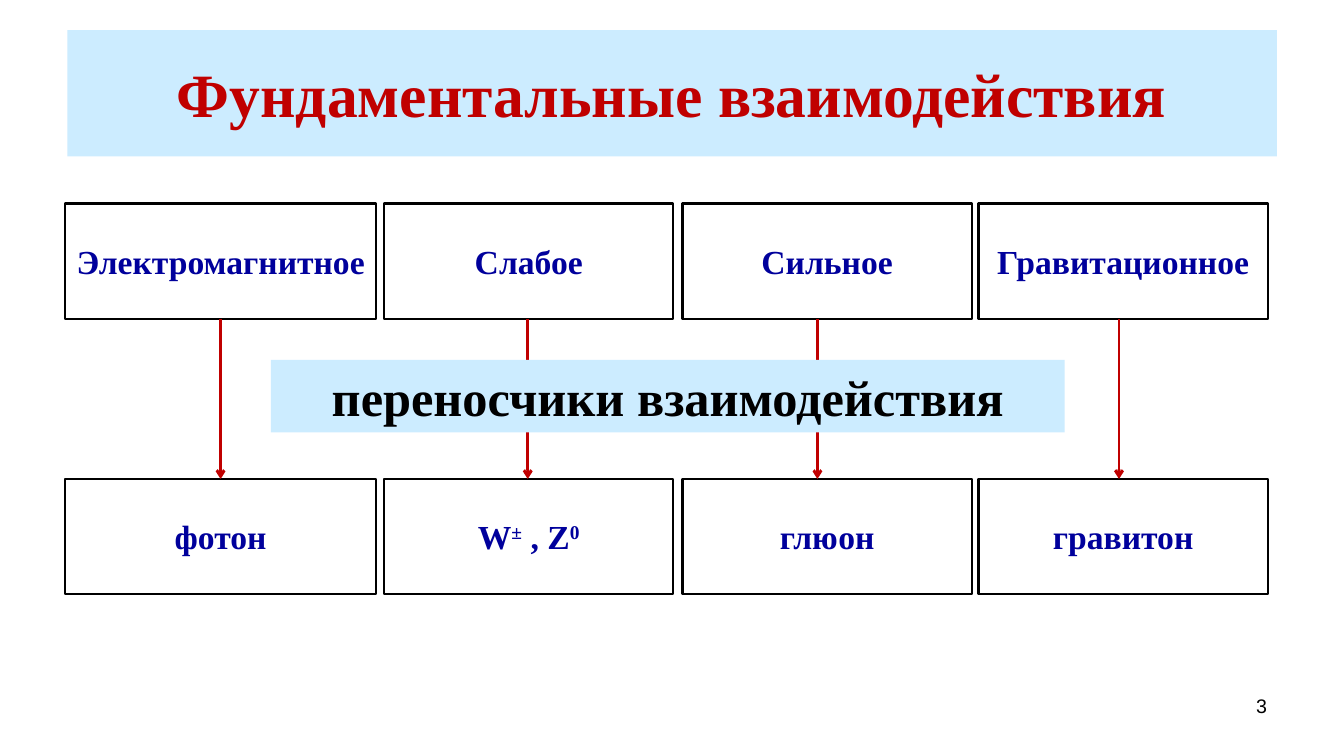
"""Build the slide on fundamental interactions and their carriers."""
from dataclasses import dataclass

from lxml.etree import SubElement
from pptx import Presentation
from pptx.dml.color import RGBColor
from pptx.enum.shapes import MSO_CONNECTOR, MSO_SHAPE
from pptx.enum.text import MSO_ANCHOR, MSO_AUTO_SIZE, PP_ALIGN
from pptx.oxml.ns import qn
from pptx.shapes.autoshape import Shape
from pptx.slide import Slide
from pptx.text.text import TextFrame
from pptx.util import Cm, Pt

COLORS = {
    "band": "CCECFF",
    "accent": "C00000",
    "label": "00009C",
    "ink": "000000",
}
SERIF = "Times New Roman"
BOX_HEIGHT = 2.9
INTERACTION_TOP = 5.13
CARRIER_TOP = 12.07


@dataclass(frozen=True)
class Span:
    text: str
    raised: bool = False


@dataclass(frozen=True)
class Interaction:
    name: str
    carrier: tuple[Span, ...]
    left: float
    arrow_x: float
    width: float = 7.29


INTERACTIONS = (
    Interaction("Электромагнитное", (Span("фотон"),), 1.65, 5.56, 7.82),
    Interaction(
        "Слабое",
        (Span("W"), Span("±", True), Span(" , Z"), Span("0", True)),
        9.68,
        13.3,
    ),
    Interaction("Сильное", (Span("глюон"),), 17.2, 20.6),
    Interaction("Гравитационное", (Span("гравитон"),), 24.66, 28.2),
)


def color(name: str) -> RGBColor:
    """Look up a palette colour."""
    return RGBColor.from_string(COLORS[name])


def write(frame: TextFrame, spans: tuple[Span, ...], size: int, ink: str,
          font: str = SERIF, bold: bool = True,
          align: PP_ALIGN = PP_ALIGN.CENTER) -> None:
    """Fill the first paragraph of a frame run by run."""
    paragraph = frame.paragraphs[0]
    paragraph.alignment = align
    for span in spans:
        run = paragraph.add_run()
        run.text = span.text
        run.font.name = font
        run.font.size = Pt(size)
        run.font.bold = bold
        run.font.color.rgb = color(ink)
        if span.raised:
            run._r.get_or_add_rPr().set("baseline", "30000")


def add_rectangle(slide: Slide, left: float, top: float,
                  width: float, height: float) -> Shape:
    """Add a plain rectangle with vertically centred text."""
    rectangle = slide.shapes.add_shape(
        MSO_SHAPE.RECTANGLE, Cm(left), Cm(top), Cm(width), Cm(height))
    rectangle.shadow.inherit = False
    rectangle.text_frame.vertical_anchor = MSO_ANCHOR.MIDDLE
    return rectangle


def add_box(slide: Slide, interaction: Interaction, top: float,
            spans: tuple[Span, ...]) -> None:
    """Add one outlined box of an interaction's column."""
    box = add_rectangle(
        slide, interaction.left, top, interaction.width, BOX_HEIGHT)
    box.fill.background()
    box.line.color.rgb = color("ink")
    box.line.width = Pt(1.5)
    box.text_frame.word_wrap = False
    write(box.text_frame, spans, 24, "label")


def add_arrow(slide: Slide, x: float) -> None:
    """Add an arrow from an interaction down to its carrier."""
    arrow = slide.shapes.add_connector(
        MSO_CONNECTOR.STRAIGHT, Cm(x), Cm(INTERACTION_TOP + BOX_HEIGHT),
        Cm(x), Cm(CARRIER_TOP))
    arrow.line.color.rgb = color("accent")
    arrow.line.width = Pt(2)
    SubElement(arrow.line._get_or_add_ln(), qn("a:tailEnd"), type="arrow")
    SubElement(arrow._element.spPr, qn("a:effectLst"))


def add_title(slide: Slide) -> None:
    """Place and format the title band."""
    title = slide.shapes.title
    title.left, title.top = Cm(1.7), Cm(0.76)
    title.width, title.height = Cm(30.48), Cm(3.18)
    title.fill.solid()
    title.fill.fore_color.rgb = color("band")
    title.text_frame.vertical_anchor = MSO_ANCHOR.MIDDLE
    title.text_frame.auto_size = MSO_AUTO_SIZE.NONE
    write(title.text_frame, (Span("Фундаментальные взаимодействия"),),
          44, "accent")


def add_carrier_band(slide: Slide) -> None:
    """Add the band that names the carriers."""
    band = add_rectangle(slide, 6.83, 9.07, 20, 1.83)
    band.fill.solid()
    band.fill.fore_color.rgb = color("band")
    band.line.fill.background()
    write(band.text_frame, (Span("переносчики взаимодействия"),), 36, "ink")


def add_page_number(slide: Slide) -> None:
    """Add the page number at the lower right."""
    number = slide.shapes.add_textbox(Cm(24.28), Cm(17.35), Cm(7.9), Cm(1.32))
    number.text_frame.word_wrap = True
    write(number.text_frame, (Span("3"),), 14, "ink", "Arial", False,
          PP_ALIGN.RIGHT)


def main() -> None:
    """Build and save the presentation."""
    deck = Presentation()
    deck.slide_width, deck.slide_height = Cm(33.87), Cm(19.05)
    slide = deck.slides.add_slide(deck.slide_layouts[5])
    add_title(slide)
    add_page_number(slide)
    for interaction in INTERACTIONS:
        add_box(slide, interaction, INTERACTION_TOP, (Span(interaction.name),))
        add_box(slide, interaction, CARRIER_TOP, interaction.carrier)
        add_arrow(slide, interaction.arrow_x)
    add_carrier_band(slide)
    deck.save("out.pptx")


if __name__ == "__main__":
    main()
